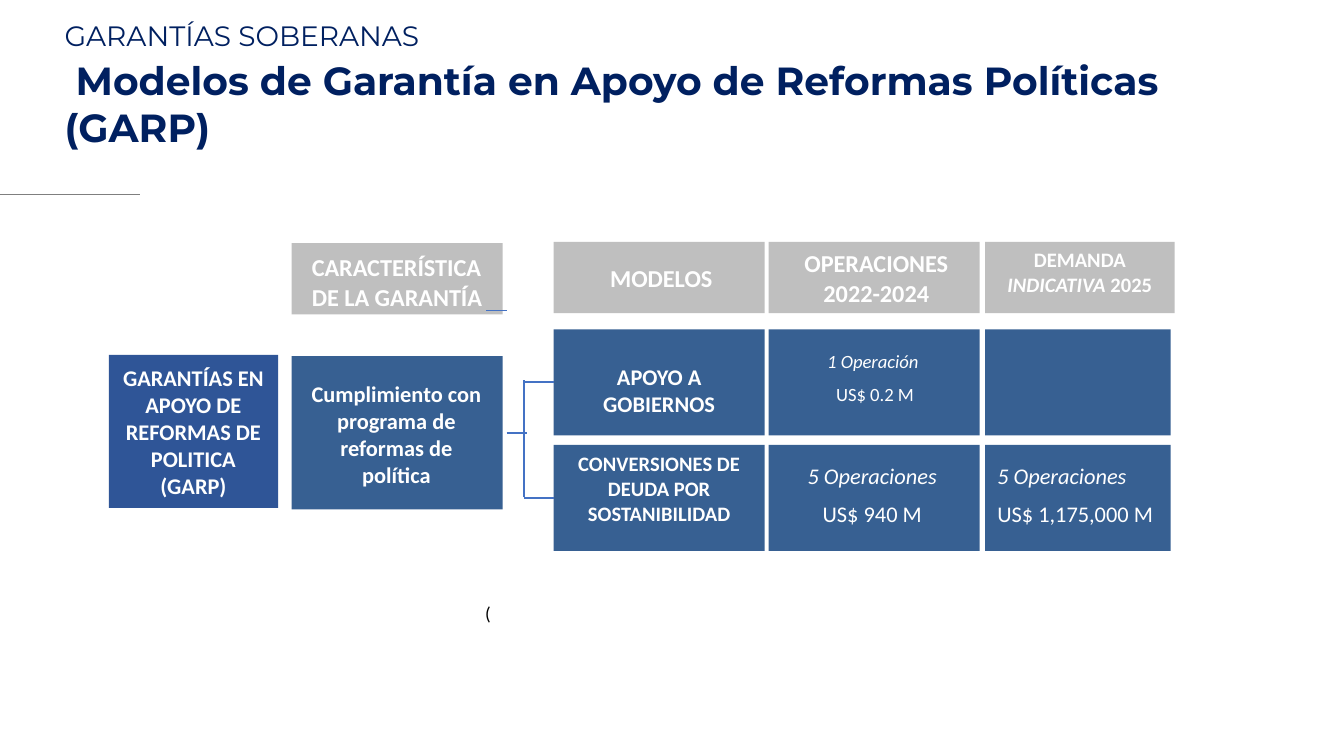
"""Builds the slide on guarantee models that support policy reforms."""
from dataclasses import dataclass
from typing import Optional

from lxml.etree import SubElement
from pptx import Presentation
from pptx.dml.color import RGBColor
from pptx.enum.shapes import MSO_CONNECTOR, MSO_SHAPE
from pptx.enum.text import MSO_ANCHOR, PP_ALIGN
from pptx.oxml.ns import qn
from pptx.shapes.autoshape import Shape
from pptx.shapes.connector import Connector
from pptx.slide import Slide
from pptx.text.text import TextFrame
from pptx.util import Inches, Pt


@dataclass(frozen=True)
class Theme:
    body_font: str = "Calibri"
    title_font: str = "Montserrat"
    navy: str = "002060"
    royal: str = "2F5597"
    steel: str = "376092"
    silver: str = "BFBFBF"
    bracket: str = "4472C4"
    rule: str = "7F7F7F"
    white: str = "FFFFFF"
    black: str = "000000"
    title: float = 21
    section: float = 15
    heading: float = 13
    body: float = 12
    compact: float = 11
    small: float = 10


THEME = Theme()


@dataclass(frozen=True)
class Span:
    text: str
    italic: bool = False


@dataclass(frozen=True)
class Words:
    paragraphs: tuple[tuple[Span, ...], ...]
    size: float
    color: str = THEME.white
    bold: bool = False
    font: str = THEME.body_font
    align: PP_ALIGN = PP_ALIGN.CENTER
    space_after: float = 0


@dataclass(frozen=True)
class Box:
    left: float
    top: float
    width: float
    height: float

    def lengths(self) -> tuple[Inches, Inches, Inches, Inches]:
        return Inches(self.left), Inches(self.top), Inches(self.width), Inches(self.height)


@dataclass(frozen=True)
class Label:
    box: Box
    words: Words
    wrap: bool = True
    inset: float = 0


@dataclass(frozen=True)
class Panel:
    box: Box
    fill: str
    words: Optional[Words] = None
    anchor: MSO_ANCHOR = MSO_ANCHOR.TOP
    top_inset: float = 0.05


@dataclass(frozen=True)
class Line:
    start: tuple[float, float]
    end: tuple[float, float]
    color: str = THEME.bracket
    width: float = 1


def bold(text: str, size: float, **style) -> Words:
    return Words(((Span(text),),), size, bold=True, **style)


def figures(operations: str, amount: str, size: float, align: PP_ALIGN = PP_ALIGN.CENTER) -> Words:
    return Words(((Span(operations, True),), (Span(amount),)), size, align=align, space_after=6)


def write(frame: TextFrame, words: Words) -> None:
    for index, spans in enumerate(words.paragraphs):
        paragraph = frame.add_paragraph() if index else frame.paragraphs[0]
        paragraph.alignment = words.align
        paragraph.space_after = Pt(words.space_after)
        for span in spans:
            run = paragraph.add_run()
            run.text = span.text
            run.font.name = words.font
            run.font.size = Pt(words.size)
            run.font.bold = words.bold
            run.font.italic = span.italic
            run.font.color.rgb = RGBColor.from_string(words.color)


def draw_panel(slide: Slide, panel: Panel) -> Shape:
    shape = slide.shapes.add_shape(MSO_SHAPE.RECTANGLE, *panel.box.lengths())
    shape.shadow.inherit = False
    shape.fill.solid()
    shape.fill.fore_color.rgb = RGBColor.from_string(panel.fill)
    shape.line.fill.background()
    if panel.words:
        shape.text_frame.word_wrap = True
        shape.text_frame.vertical_anchor = panel.anchor
        shape.text_frame.margin_top = Inches(panel.top_inset)
        write(shape.text_frame, panel.words)
    return shape


def draw_label(slide: Slide, label: Label) -> None:
    frame = slide.shapes.add_textbox(*label.box.lengths()).text_frame
    frame.word_wrap = label.wrap
    inset = Inches(label.inset)
    frame.margin_left = frame.margin_right = frame.margin_top = frame.margin_bottom = inset
    write(frame, label.words)


def draw_line(slide: Slide, line: Line) -> Connector:
    ends = [Inches(value) for value in (*line.start, *line.end)]
    connector = slide.shapes.add_connector(MSO_CONNECTOR.STRAIGHT, *ends)
    connector.line.color.rgb = RGBColor.from_string(line.color)
    connector.line.width = Pt(line.width)
    SubElement(connector._element.spPr, qn("a:effectLst"))
    return connector


MODEL, OPERATIONS, DEMAND = 4.12, 5.72, 7.33
COLUMN, DEMAND_COLUMN = 1.57, 1.38
HEADER_TOP, HEADER = 1.8, 0.53
SUPPORT_TOP, SWAP_TOP, ROW = 2.45, 3.31, 0.79
FEATURE, BRACKET = 2.17, 3.9

MODELS = (
    Panel(Box(MODEL, SUPPORT_TOP, COLUMN, ROW), THEME.steel,
          bold("APOYO A GOBIERNOS", THEME.body), top_inset=0.25),
    Panel(Box(MODEL, SWAP_TOP, COLUMN, ROW), THEME.steel,
          bold("CONVERSIONES DE DEUDA POR SOSTANIBILIDAD", THEME.compact)),
)
PANELS = (
    Panel(Box(0.81, 2.64, 1.26, 1.14), THEME.royal,
          bold("GARANTÍAS EN APOYO DE REFORMAS DE POLITICA (GARP)", THEME.body), MSO_ANCHOR.MIDDLE),
    Panel(Box(FEATURE, 1.81, COLUMN, HEADER), THEME.silver),
    Panel(Box(FEATURE, 2.65, COLUMN, 1.14), THEME.steel),
    Panel(Box(MODEL, HEADER_TOP, COLUMN, HEADER), THEME.silver),
    Panel(Box(OPERATIONS, HEADER_TOP, COLUMN, HEADER), THEME.silver),
    Panel(Box(DEMAND, HEADER_TOP, 1.41, HEADER), THEME.silver),
    *(Panel(Box(left, top, width, ROW), THEME.steel)
      for top in (SUPPORT_TOP, SWAP_TOP)
      for left, width in ((OPERATIONS, COLUMN), (DEMAND, DEMAND_COLUMN))),
)
LABELS = (
    Label(Box(2.32, 1.88, 1.34, 0.74),
          bold("CARACTERÍSTICA DE LA GARANTÍA", THEME.heading, align=PP_ALIGN.LEFT)),
    Label(Box(2.26, 2.83, 1.38, 0.81),
          bold("Cumplimiento con programa de reformas de política", THEME.body)),
    Label(Box(4.54, 1.96, 0.77, 0.22), bold("MODELOS", THEME.heading, align=PP_ALIGN.LEFT), False),
    Label(Box(5.92, 1.85, 1.2, 0.44),
          Words(((Span("OPERACIONES"),), (Span("2022-2024"),)), THEME.heading, bold=True)),
    Label(Box(7.46, 1.84, 1.15, 0.37),
          Words(((Span("DEMANDA"), Span(" INDICATIVA", True), Span(" 2025")),), THEME.compact, bold=True)),
    Label(Box(6.15, 2.6, 0.72, 0.42), figures("1 Operación ", "US$ 0.2 M", THEME.small), False),
    Label(Box(5.95, 3.44, 1.08, 0.49), figures("5 Operaciones", "US$ 940 M", THEME.body)),
    Label(Box(7.42, 3.44, 1.18, 0.49),
          figures("5 Operaciones", "US$ 1,175,000 M", THEME.body, PP_ALIGN.LEFT), False),
    Label(Box(3.61, 4.48, 0.04, 0.17),
          Words(((Span("("),),), THEME.small, THEME.black, align=PP_ALIGN.LEFT), False),
    Label(Box(0.44, 0.38, 9.1, 0.43),
          bold(" Modelos de Garantía en Apoyo de Reformas Políticas (GARP)", THEME.title,
               color=THEME.navy, font=THEME.title_font, align=PP_ALIGN.LEFT), inset=0.04),
    Label(Box(0.44, 0.1, 8.25, 0.33),
          Words(((Span("GARANTÍAS SOBERANAS"),),), THEME.section, THEME.navy,
                font=THEME.title_font, align=PP_ALIGN.LEFT), inset=0.04),
)
LINES = (
    Line((BRACKET, 3.7), (BRACKET, 2.83)),
    Line((3.62, 2.31), (3.77, 2.31)),
    Line((3.77, 3.22), (3.92, 3.22)),
    Line((0, 1.45), (1.04, 1.45), THEME.rule, 0.5),
)


def main() -> None:
    presentation = Presentation()
    presentation.slide_width, presentation.slide_height = Inches(10), Inches(10 * 9 / 16)
    slide = presentation.slides.add_slide(presentation.slide_layouts[6])
    for panel in PANELS:
        draw_panel(slide, panel)
    for model in MODELS:
        shape = draw_panel(slide, model)
        middle = model.box.top + model.box.height / 2
        draw_line(slide, Line((BRACKET, middle), (MODEL, middle))).end_connect(shape, 1)
    for line in LINES:
        draw_line(slide, line)
    for label in LABELS:
        draw_label(slide, label)
    presentation.save("out.pptx")


if __name__ == "__main__":
    main()
